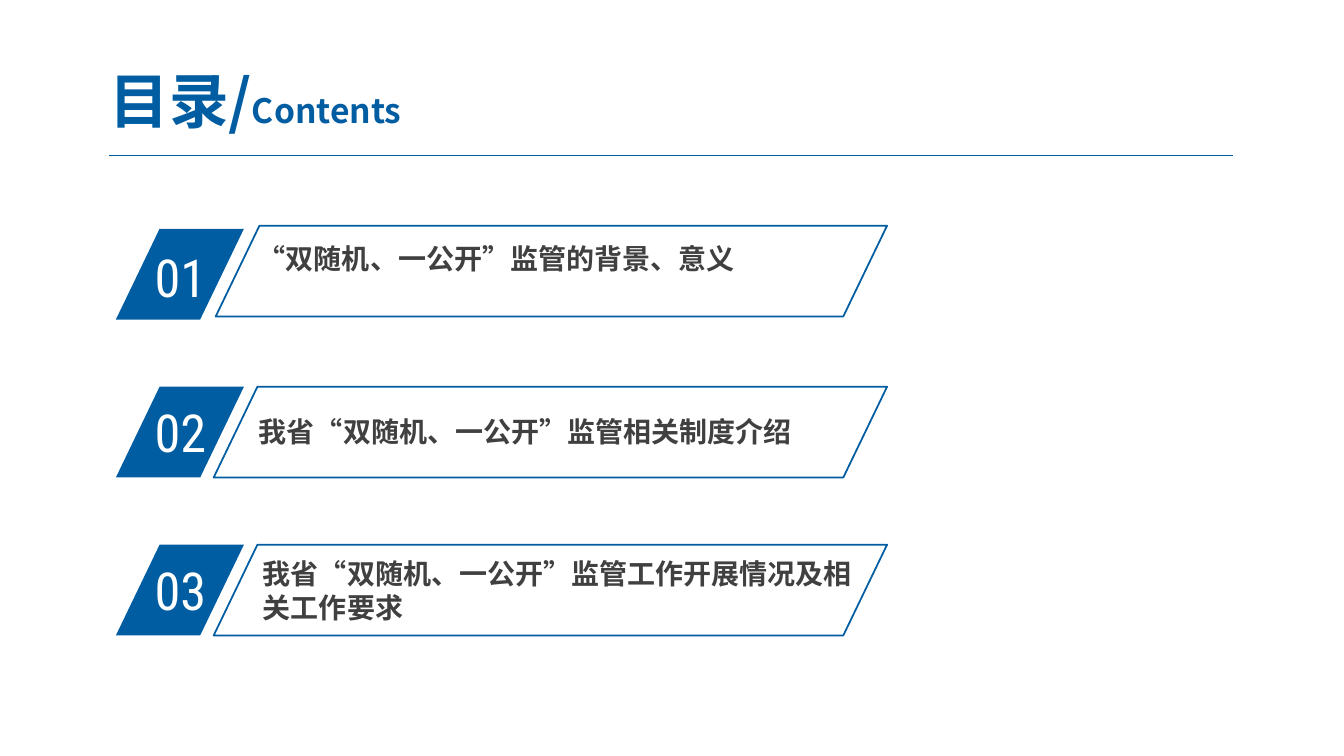
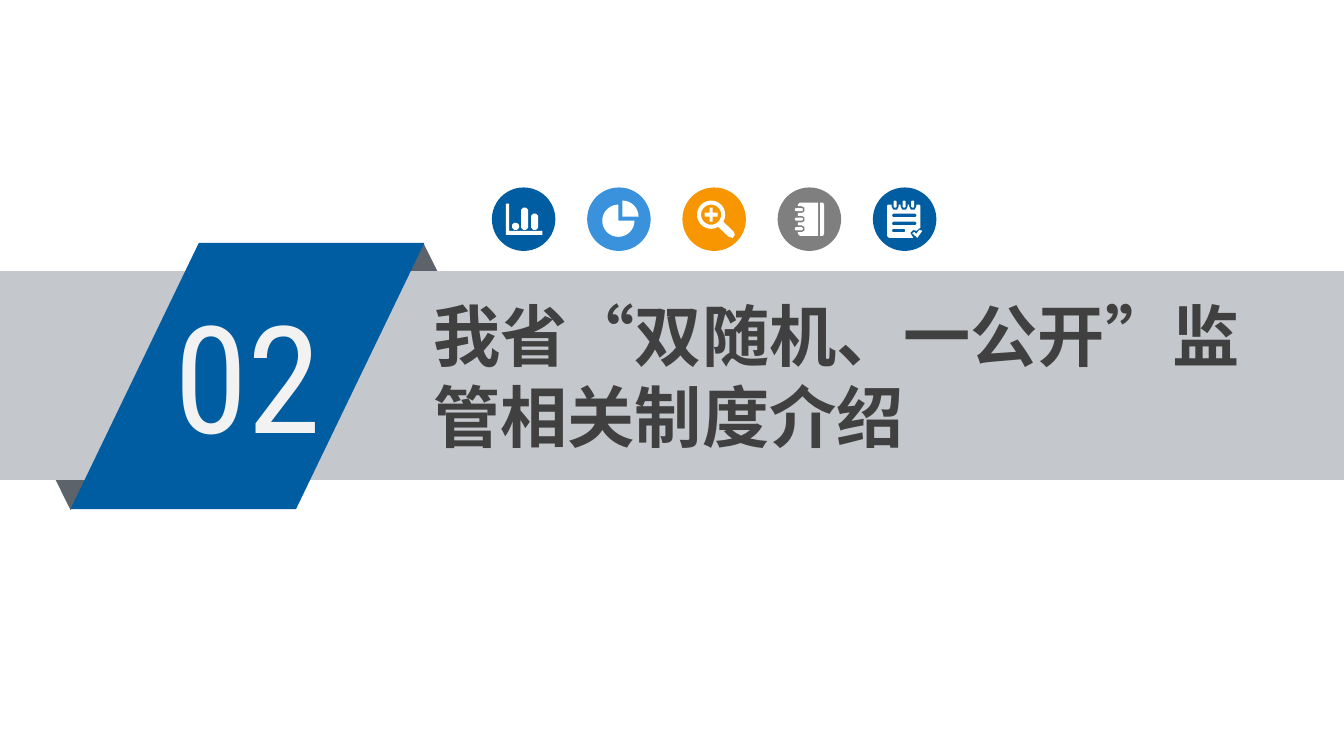
import math
import pptx
import pptx.util
import pptx.dml.color
import pptx.enum.lang
import pptx.enum.shapes
import pptx.enum.text
import pptx.oxml.ns
import lxml.etree

# Shared look: grid cells are a tenth of an inch
COLS, ROWS = 133.33, 75
BLUE, SKY, AMBER, GRAY = "005DA2", "3992DB", "F79600", "7F7F7F"
RULE, BAND, FOLD = "005B9E", "C4C7CB", "5D636A"
INK, PALE, WHITE = "404040", "F2F2F2", "FFFFFF"
HAN, NUM = "Noto Sans CJK SC", "Roboto Condensed"
SLANT = 0.482

KIND = pptx.enum.shapes.MSO_SHAPE
SKEW = KIND.PARALLELOGRAM
TOPIC = "我省“双随机、一公开”监管相关制度介绍"


def cell(n):
    return pptx.util.Inches(n / 10)


def hue(code):
    return pptx.dml.color.RGBColor.from_string(code)


def paint(shape, fill=None, line=None):
    shape.shadow.inherit = False
    if fill:
        shape.fill.solid()
        shape.fill.fore_color.rgb = hue(fill)
    else:
        shape.fill.background()
    if line:
        shape.line.color.rgb = hue(line)
        shape.line.width = pptx.util.Pt(1.25)
    else:
        shape.line.fill.background()


def part(slide, kind, box, fill=None, line=None, adj=None, turn=0):
    shape = slide.shapes.add_shape(kind, *map(cell, box))
    if adj is not None:
        shape.adjustments[0] = adj
    shape.rotation = turn
    paint(shape, fill, line)


def label(slide, box, runs, font, color, bold=False):
    """Place a text box; runs are pairs of words and size."""
    frame = slide.shapes.add_textbox(*map(cell, box)).text_frame
    frame.word_wrap = True
    para = frame.paragraphs[0]
    for words, size in runs:
        run = para.add_run()
        run.text = words
        face = run.font
        face.size, face.bold, face.name = pptx.util.Pt(size), bold, font
        face.color.rgb = hue(color)
        face.language_id = pptx.enum.lang.MSO_LANGUAGE_ID.SIMPLIFIED_CHINESE
        east = lxml.etree.Element(pptx.oxml.ns.qn("a:ea"), typeface=font)
        face._element.find(pptx.oxml.ns.qn("a:latin")).addnext(east)
    return frame


# Contents slide
def header(slide, left, top, width):
    frame = label(slide, (left - 1.9, top, 32.9, 7.2),
                  [("目录/", 42.6), ("Contents", 24)], HAN, BLUE, True)
    frame.margin_left = frame.margin_right = 0
    frame.vertical_anchor = pptx.enum.text.MSO_ANCHOR.MIDDLE
    frame.paragraphs[0].alignment = pptx.enum.text.PP_ALIGN.CENTER
    base = cell(top + 9.15)
    rule = slide.shapes.add_connector(
        pptx.enum.shapes.MSO_CONNECTOR.STRAIGHT,
        cell(left), base, cell(left + width), base)
    rule.line.color.rgb = hue(RULE)
    rule.line.width = pptx.util.Pt(0.75)
    lxml.etree.SubElement(rule._element.spPr, pptx.oxml.ns.qn("a:effectLst"))


def entry(slide, left, top, number, words, frame, text, drop):
    """Frame and text are offsets from the corner of the number tile."""
    part(slide, SKEW, (left, top, 12.7, 9), BLUE, adj=SLANT)
    label(slide, (left + 2.85, top + drop, 12.1, 9.8),
          [(number, 37.4)], NUM, WHITE)
    label(slide, (left + text[0], top + text[1], 61.2, 7.7),
          [(words, 20)], HAN, INK, True)
    x = left + frame[0]
    part(slide, SKEW, (x, top + frame[1], 88 - x, 9), line=BLUE, adj=SLANT)


def contents(slide):
    header(slide, 10.8, 6.3, 111.5)
    items = [
        ("“双随机、一公开”监管的背景、意义", (9.9, -0.3), (13.1, 0.8), 1.1),
        (TOPIC, (9.7, 0), (13.2, 2.3), 0.8),
        ("我省“双随机、一公开”监管工作开展情况及相关工作要求",
         (9.7, 0), (13.6, 0.7), 0.8),
    ]
    for i, (words, frame, text, drop) in enumerate(items):
        entry(slide, 11.5, 22.7 + 15.67 * i, f"0{i + 1}",
              words, frame, text, drop)


# Icon outlines, on a disc of 63 by 63 units
def pill(x, y, w, h):
    """Give a box with cut corners."""
    c = min(w, h) * 0.3
    r, b = x + w, y + h
    return [(x + c, y), (r - c, y), (r, y + c), (r, b - c),
            (r - c, b), (x + c, b), (x, b - c), (x, y + c)]


def arc(x, y, radius, start=0, end=360, count=24):
    turns = [math.radians(start + (end - start) * i / count)
             for i in range(count + 1)]
    return [(x + radius * math.cos(t), y + radius * math.sin(t))
            for t in turns]


def bars():
    axes = [(14, 16), (17, 16), (17, 43), (50, 43), (50, 47), (14, 47)]
    return [axes] + [pill(x, 42 - high, 7, high)
                     for x, high in [(20, 7), (29, 22), (39, 16)]]


def chart():
    return [arc(31, 33, 16, 0, 270) + [(31, 33)],
            arc(35, 29, 16, 270, 360, 8) + [(35, 29)]]


def lens():
    grip = [(51, 44), (52, 47), (50, 50), (46, 49)]
    plus = [(27, 20), (30, 20), (30, 25), (35, 25), (35, 29), (30, 29),
            (30, 34), (27, 34), (27, 29), (22, 29), (22, 25), (27, 25)]
    return [arc(28.5, 27, 14, 60, 390) + grip, arc(28.5, 27, 10), plus]


def book():
    cover = [(22, 15), (40, 15), (40, 48), (22, 48), (20, 46)]
    rows = [41, 31.5, 22]
    for y in rows:
        cover += [(20, y + 3.3), (24, y + 3.3), (26.5, y + 2), (26.5, y - 2),
                  (24, y - 3.3), (20, y - 3.3)]
    cover.append((20, 17))
    spine = [(42, 15), (45, 15), (46, 17), (46, 46), (45, 48), (42, 48)]
    return [cover, spine] + [pill(17, y - 1.5, 8, 3) for y in rows]


def notes():
    page, rings = [(14, 18), (15, 17)], [22, 31, 39.5]
    for x in rings:
        page += [(x - 3.5, 17), (x - 3.5, 19), (x - 2, 22), (x + 2, 22),
                 (x + 3.5, 19), (x + 3.5, 17)]
    page += [(46, 17), (47, 18), (47, 40), (43, 43), (40, 42), (37, 45),
             (40, 50), (16, 50), (14, 48)]
    tick = [(39, 45.5), (41, 44), (43, 46), (46, 42), (49, 43), (44, 50)]
    lines = [pill(19, y, wide, 3.4)
             for y, wide in [(26, 24), (34, 24), (41, 13)]]
    return [page, tick] + lines + [pill(x - 1.5, 13, 3, 7) for x in rings]


def glyph(slide, disc, loops):
    """Join the loops in one outline; inner loops become holes."""
    x, y, size = disc
    spots = [[(cell(x + a * size / 63), cell(y + b * size / 63))
              for a, b in loop] for loop in loops]
    pen = slide.shapes.build_freeform(*spots[0][0])
    pen.add_line_segments(spots[0][1:], close=True)
    for loop in spots[1:]:
        pen.move_to(*loop[0])
        pen.add_line_segments(loop[1:], close=True)
    paint(pen.convert_to_shape(), WHITE)


def icons(slide, left, top, size, step):
    kinds = [(bars, BLUE), (chart, SKY), (lens, AMBER),
             (book, GRAY), (notes, BLUE)]
    for i, (draw, color) in enumerate(kinds):
        disc = (left + step * i, top, size)
        part(slide, KIND.OVAL, (disc[0], top, size, size), color)
        glyph(slide, disc, draw())


# Section slide
def banner(slide, top, high, number, words):
    # Folds behind the band
    fold = KIND.ISOSCELES_TRIANGLE
    part(slide, fold, (36, top - 2.8, 12, 12.1), FOLD)
    part(slide, fold, (1, top + 11.6, 12, 12.1), FOLD, turn=180)
    part(slide, KIND.RECTANGLE, (0, top, COLS, high), BAND)
    # Number tile and title
    part(slide, SKEW, (7, top - 2.8, 35.1, high + 5.7), BLUE, adj=SLANT)
    label(slide, (16.3, top + 0.8, 19.3, 18.9),
          [(number, 106.7)], NUM, PALE)
    label(slide, (42, top + 1.8, 82.3, 17.2), [(words, 48)], HAN, INK, True)


def section(slide):
    banner(slide, 26.9, 20.7, "02", TOPIC)
    icons(slide, 48.8, 18.6, 6.3, 9.45)


def main():
    deck = pptx.Presentation()
    deck.slide_width, deck.slide_height = cell(COLS), cell(ROWS)
    for build in (contents, section):
        build(deck.slides.add_slide(deck.slide_layouts[6]))
    deck.save("out.pptx")


if __name__ == "__main__":
    main()
